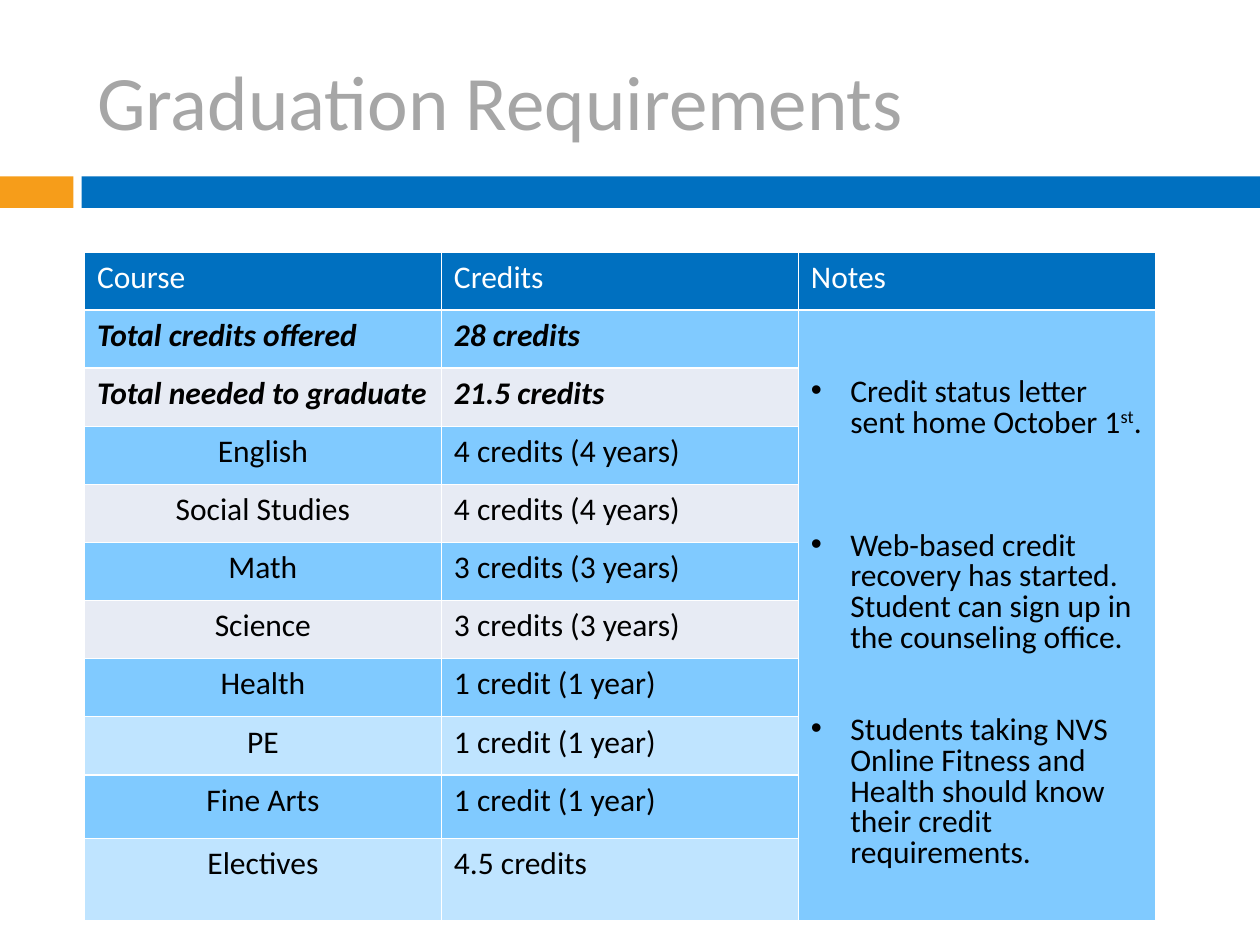
from lxml.etree import SubElement
from pptx import Presentation
from pptx.dml.color import RGBColor
from pptx.enum.shapes import MSO_SHAPE
from pptx.enum.text import MSO_ANCHOR, MSO_AUTO_SIZE, PP_ALIGN
from pptx.oxml.ns import qn
from pptx.util import Pt

# Content
TITLE = "Graduation Requirements"
HEADER = ["Course", "Credits", "Notes"]
TOTALS = [
    ("Total credits offered", "28 credits"),
    ("Total needed to graduate", "21.5 credits"),
]
COURSES = [
    ("English", "4 credits (4 years)"),
    ("Social Studies", "4 credits (4 years)"),
    ("Math", "3 credits (3 years)"),
    ("Science", "3 credits (3 years)"),
    ("Health", "1 credit (1 year)"),
    ("PE", "1 credit (1 year)"),
    ("Fine Arts", "1 credit (1 year)"),
    ("Electives", "4.5 credits"),
]
# Each note: blank lines above it, then (text, is superscript) pieces
NOTES = [
    (2, [("Credit status letter sent home October 1", False), ("st", True), (".", False)]),
    (3, [("Web-based credit recovery has started. Student can sign up in "
          "the counseling office.", False)]),
    (2, [("Students taking NVS Online Fitness and Health should know their "
          "credit requirements.", False)]),
]

# Look
FONT = "Calibri"
BLUE, ORANGE, GREY = "0070C0", "F69D1A", "A6A6A6"
SKY, PALE, LIGHT = "80CAFF", "E7EBF4", "BFE4FF"
WHITE, BLACK = "FFFFFF", "000000"
ROW_FILLS = [SKY, PALE] * 3 + [SKY, LIGHT] * 2
LEFT, TOP, COL_W = 48.24, 144, 204
ROW_HEIGHTS = [33.2] * 9 + [36.4, 47.2]
LINE = 17.57  # one 18 pt line at 80 % spacing
INDENT = 22.5


def rgb(value):
    return RGBColor.from_string(value)


def style_run(r, size, color, bold=False):
    r.font.name, r.font.size = FONT, Pt(size)
    r.font.bold = r.font.italic = bold
    r.font.color.rgb = rgb(color)


def add_band(s, left, width, color):
    sp = s.shapes.add_shape(MSO_SHAPE.RECTANGLE, Pt(left), Pt(100.8), Pt(width), Pt(18))
    sp.shadow.inherit = False
    sp.fill.solid()
    sp.fill.fore_color.rgb = rgb(color)
    sp.line.fill.background()


def format_cell(cell, fill):
    tc_pr = cell._tc.get_or_add_tcPr()
    for side in ("lnL", "lnR", "lnT", "lnB"):
        ln = SubElement(tc_pr, qn("a:" + side), w=str(Pt(1)))
        SubElement(SubElement(ln, qn("a:solidFill")), qn("a:srgbClr"), val=WHITE)
    cell.fill.solid()
    cell.fill.fore_color.rgb = rgb(fill)


def write_cell(cell, text, color=BLACK, bold=False, align=PP_ALIGN.LEFT):
    p = cell.text_frame.paragraphs[0]
    p.text, p.alignment = text, align
    style_run(p.runs[0], 18, color, bold)


def write_notes(cell):
    tf = cell.text_frame
    cell.margin_top = Pt(3.6 + NOTES[0][0] * LINE)
    for i, (blank_lines, pieces) in enumerate(NOTES):
        p = tf.add_paragraph() if i else tf.paragraphs[0]
        p.line_spacing = 0.8
        if i:
            p.space_before = Pt(blank_lines * LINE)
        p_pr = p._p.get_or_add_pPr()
        p_pr.set("marL", str(Pt(INDENT)))
        p_pr.set("indent", str(-Pt(INDENT)))
        SubElement(p_pr, qn("a:buFont"), typeface="Arial")
        SubElement(p_pr, qn("a:buChar"), char="•")
        for text, superscript in pieces:
            r = p.add_run()
            r.text = text
            style_run(r, 18, BLACK)
            if superscript:
                r._r.get_or_add_rPr().set("baseline", "30000")


def main():
    prs = Presentation()
    prs.slide_width, prs.slide_height = Pt(720), Pt(540)
    s = prs.slides.add_slide(prs.slide_layouts[5])

    # Bands under the title
    add_band(s, 0, 42, ORANGE)
    add_band(s, 46.6, 673.4, BLUE)

    # Title
    title = s.shapes.title
    title.left, title.top, title.width, title.height = Pt(LEFT), Pt(18), Pt(671.76), Pt(78)
    tf = title.text_frame
    tf.text = TITLE
    tf.auto_size = MSO_AUTO_SIZE.NONE
    tf.vertical_anchor = MSO_ANCHOR.MIDDLE
    tf.paragraphs[0].alignment = PP_ALIGN.LEFT
    style_run(tf.paragraphs[0].runs[0], 44, GREY)

    # Table grid
    table = s.shapes.add_table(len(ROW_HEIGHTS), len(HEADER), Pt(LEFT), Pt(TOP),
                               Pt(COL_W * len(HEADER)), Pt(sum(ROW_HEIGHTS))).table
    table.first_row = table.horz_banding = False
    for col in table.columns:
        col.width = Pt(COL_W)
    for row, height, fill in zip(table.rows, ROW_HEIGHTS, [BLUE] + ROW_FILLS):
        row.height = Pt(height)
        for c, cell in enumerate(row.cells):
            format_cell(cell, SKY if c == 2 and fill != BLUE else fill)

    # Table text
    for c, text in enumerate(HEADER):
        write_cell(table.cell(0, c), text, WHITE)
    for i, (course, credits) in enumerate(TOTALS + COURSES):
        total = i < len(TOTALS)
        write_cell(table.cell(i + 1, 0), course, bold=total,
                   align=PP_ALIGN.LEFT if total else PP_ALIGN.CENTER)
        write_cell(table.cell(i + 1, 1), credits, bold=total)
    notes = table.cell(1, 2)
    notes.merge(table.cell(len(ROW_HEIGHTS) - 1, 2))
    write_notes(notes)

    prs.save("out.pptx")


if __name__ == "__main__":
    main()
